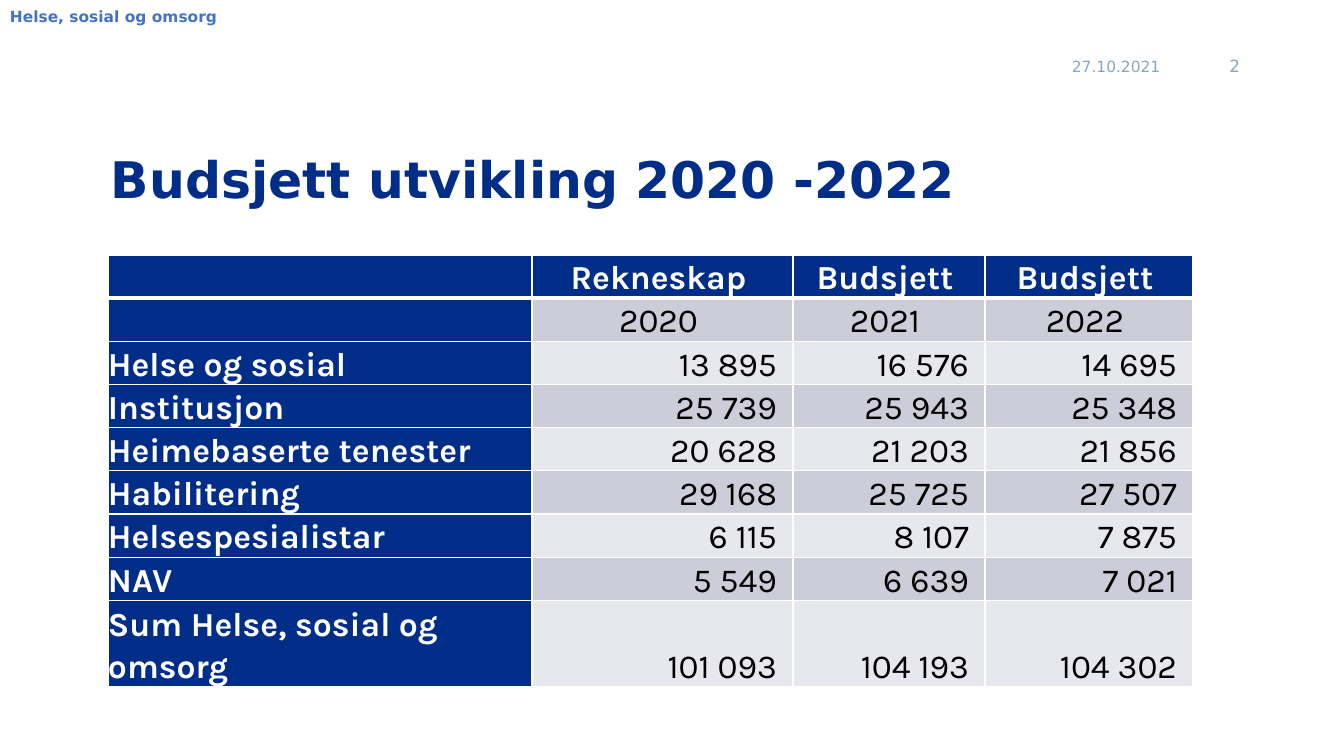
from lxml import etree
from pptx import Presentation
from pptx import util as u
from pptx.dml.color import RGBColor
from pptx.enum import text
from pptx.oxml import ns

EMU_PER_PX = 914400 / 100.8
NAVY, WHITE, BLACK = "002D87", "FFFFFF", "000000"
BANDS = ("E7E8ED", "CCCDD9")
MUTED, ACCENT = "86A7C2", "4472C4"
LEFT, CENTER, RIGHT = text.PP_ALIGN.LEFT, text.PP_ALIGN.CENTER, text.PP_ALIGN.RIGHT
COLUMN_WIDTHS = (424, 261, 192, 208)
ROW_HEIGHT = 36
BUDGET = (
    ("", "Rekneskap", "Budsjett", "Budsjett"),
    ("", "2020", "2021", "2022"),
    ("Helse og sosial", "13 895", "16 576", "14 695"),
    ("Institusjon", "25 739", "25 943", "25 348"),
    ("Heimebaserte tenester", "20 628", "21 203", "21 856"),
    ("Habilitering", "29 168", "25 725", "27 507"),
    ("Helsespesialistar", "6 115", "8 107", "7 875"),
    ("NAV", "5 549", "6 639", "7 021"),
    ("Sum Helse, sosial og omsorg", "101 093", "104 193", "104 302"),
)


def px(length):
    return u.Emu(round(length * EMU_PER_PX))


def rgb(value):
    return RGBColor.from_string(value)


def style(paragraph, face, size, color, bold, align):
    paragraph.alignment = align
    font = paragraph.font
    font.name, font.size, font.bold = face, u.Pt(size), bold
    font.color.rgb = rgb(color)


def add_label(slide, words, place, size, color, bold=False, align=LEFT,
              anchor=text.MSO_ANCHOR.MIDDLE):
    label = slide.shapes.add_textbox(*map(px, place)).text_frame
    label.word_wrap = True
    label.vertical_anchor = anchor
    label.text = words
    style(label.paragraphs[0], "DejaVu Sans", size, color, bold, align)
    return label


def add_borders(cell, top, bottom):
    properties = cell._tc.get_or_add_tcPr()
    for side, points in (("L", 1), ("R", 1), ("T", top), ("B", bottom)):
        line = etree.SubElement(properties, ns.qn(f"a:ln{side}"), w=str(u.Pt(points)))
        fill = etree.SubElement(line, ns.qn("a:solidFill"))
        etree.SubElement(fill, ns.qn("a:srgbClr"), val=WHITE)


def fill_cell(cell, words, row, column):
    heading = row == 0 or column == 0
    add_borders(cell, 3 if row == 1 else 1, 3 if row == 0 else 1)
    cell.fill.solid()
    cell.fill.fore_color.rgb = rgb(NAVY if heading else BANDS[row % 2])
    if not words:
        return
    align, gap = (LEFT, 0) if column == 0 else (CENTER, 8) if row < 2 else (RIGHT, 16)
    cell.margin_left = cell.margin_top = cell.margin_bottom = 0
    cell.margin_right = px(gap)
    cell.vertical_anchor = text.MSO_ANCHOR.BOTTOM
    cell.text = words
    paragraph = cell.text_frame.paragraphs[0]
    paragraph.line_spacing = 1.07
    paragraph.space_after = u.Pt(8)
    style(paragraph, "Karla", 24, WHITE if heading else BLACK, heading, align)


def add_budget(slide):
    size = (sum(COLUMN_WIDTHS), ROW_HEIGHT * len(BUDGET))
    budget = slide.shapes.add_table(
        len(BUDGET), len(COLUMN_WIDTHS), *map(px, (108, 255, *size))).table
    budget.horz_banding = False
    for column, width in zip(budget.columns, COLUMN_WIDTHS):
        column.width = px(width)
    for row, entries in enumerate(BUDGET):
        budget.rows[row].height = px(ROW_HEIGHT)
        for column, words in enumerate(entries):
            fill_cell(budget.cell(row, column), words, row, column)


def main():
    deck = Presentation()
    deck.slide_width, deck.slide_height = px(1344), px(756)
    slide = deck.slides.add_slide(deck.slide_layouts[6])
    title = add_label(slide, "Budsjett utvikling 2020 -2022", (101, 109, 1151, 146),
                      36, NAVY, bold=True)
    title.paragraphs[0].line_spacing = 0.9
    add_budget(slide)
    add_label(slide, "27.10.2021", (1062, 46, 116, 40), 11, MUTED)
    add_label(slide, "2", (1193, 46, 57, 40), 12, MUTED, align=RIGHT)
    department = add_label(slide, "Helse, sosial og omsorg", (0, 0, 1344, 50), 11, ACCENT,
                           bold=True, anchor=text.MSO_ANCHOR.TOP)
    department.margin_top = px(7)
    deck.save("out.pptx")


if __name__ == "__main__":
    main()
